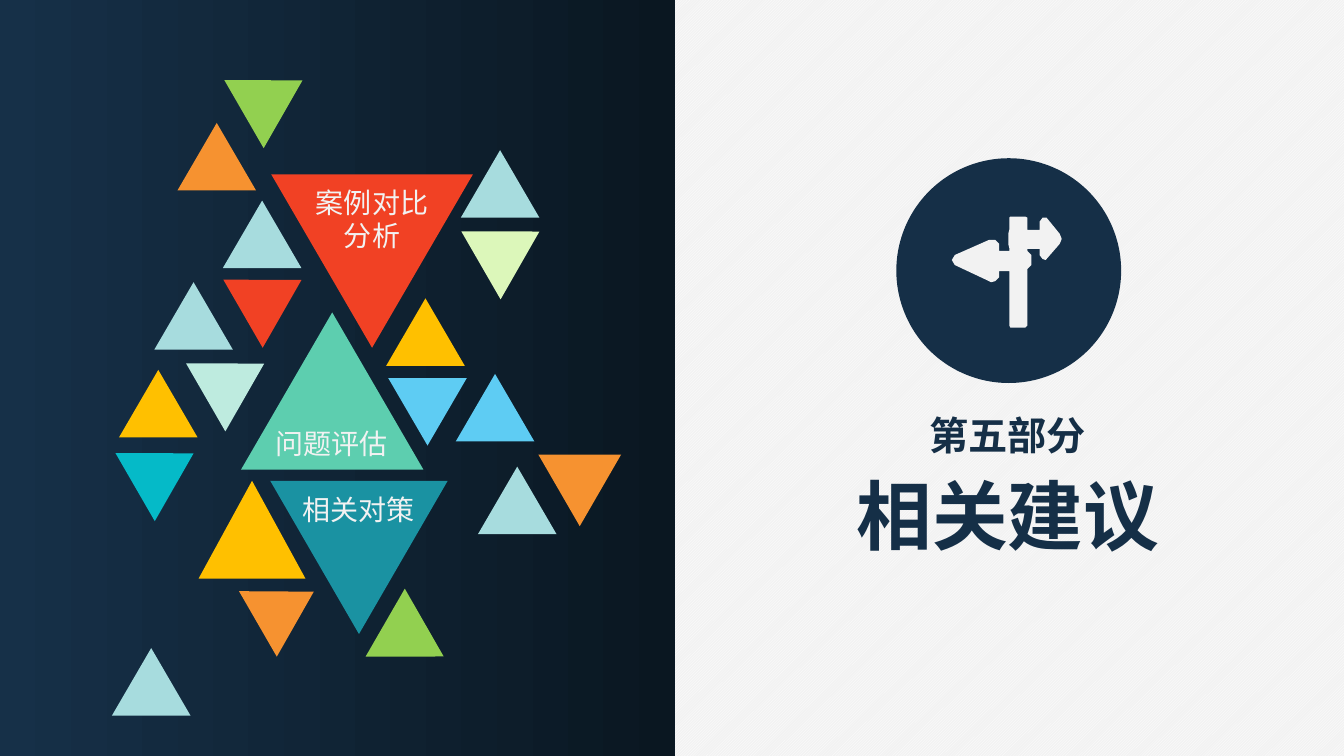
from lxml.etree import SubElement
from pptx import Presentation
from pptx.dml.color import RGBColor
from pptx.enum.dml import MSO_PATTERN as Pattern
from pptx.enum.shapes import MSO_SHAPE as Kind
from pptx.enum.text import MSO_AUTO_SIZE as Fit, PP_ALIGN as Align
from pptx.oxml.ns import qn
from pptx.util import Pt

PX = 9144  # EMU per px, 100 px to the inch
FONT = "Noto Sans CJK SC"
NAVY, PALE, WHITE = "152F47", "F2F2F2", "FFFFFF"
RED, AMBER, ORANGE, GREEN = "F14124", "FFC000", "F69230", "92D050"
MIST, SKY, MINT, JADE = "A7DCDE", "5ECCF3", "BEEBDF", "5DCEAF"
TEAL, CYAN, LIME = "1A92A2", "05BAC8", "DCF7BA"


def rgb(code):
    return RGBColor.from_string(code)


class Page:
    def __init__(self, deck):
        self.slide = deck.slides.add_slide(deck.slide_layouts[6])
        self.shapes = self.slide.shapes

    def ground(self, fore, back):
        fill = self.slide.background.fill
        fill.patterned()
        fill.pattern = Pattern.LIGHT_UPWARD_DIAGONAL
        fill.fore_color.rgb = rgb(fore)
        fill.back_color.rgb = rgb(back)

    def paint(self, shape, color):
        shape.shadow.inherit = False
        shape.line.fill.background()
        shape.fill.solid()
        shape.fill.fore_color.rgb = rgb(color)
        return shape

    def shape(self, kind, box, color, turn=0):
        item = self.shapes.add_shape(kind, *(n * PX for n in box))
        item.rotation = turn
        return self.paint(item, color)

    def fade(self, box, start, end):
        fill = self.shape(Kind.RECTANGLE, box, start).fill
        fill.gradient()
        fill.gradient_angle = 0
        for stop, color in zip(fill.gradient_stops, (start, end)):
            stop.color.rgb = rgb(color)

    def outline(self, points, color):
        pen = self.shapes.build_freeform(*points[0], scale=PX)
        pen.add_line_segments(points[1:], close=True)
        return self.paint(pen.convert_to_shape(), color)

    def text(self, box, lines, size, color, bold=False, align=Align.CENTER):
        frame = self.shapes.add_textbox(*(n * PX for n in box)).text_frame
        frame.word_wrap = False
        frame.auto_size = Fit.SHAPE_TO_FIT_TEXT
        frame.text = lines
        for para in frame.paragraphs:
            para.alignment = align
            font = para.font
            font.name, font.size, font.bold = FONT, Pt(size), bold
            font.color.rgb = rgb(color)
            style = para._p.pPr.find(qn("a:defRPr"))
            SubElement(style, qn("a:ea"), typeface=FONT)


# Small triangles, all of one size: left, top, colour, turn
SMALL = [
    (153, 280, MIST, 0), (457, 149, MIST, 0), (194, 344, MINT, 60),
    (111, 643, MIST, 0), (452, 371, SKY, 0), (176, 122, ORANGE, 0),
    (221, 199, MIST, 0), (232, 63, GREEN, 60), (467, 213, LIME, 60),
    (124, 433, CYAN, 60), (383, 296, AMBER, 0), (385, 375, SKY, 180),
    (231, 261, RED, 60), (474, 463, MIST, 0), (372, 601, GREEN, 120),
    (118, 367, AMBER, 0),
]
# Triangles of other sizes: box, colour, turn
LARGE = [
    ((239, 310, 181, 156), JADE, 0), ((268, 477, 176, 152), TEAL, 180),
    ((269, 173, 200, 172), RED, 180), ((534, 451, 82, 71), ORANGE, 180),
    ((246, 571, 75, 64), ORANGE, 60), ((197, 477, 106, 97), AMBER, 0),
]
# Signpost, clockwise from the right-hand arrow
SIGN = [
    (1051, 232), (1038, 216), (1034, 216), (1031, 220), (1031, 228),
    (1019, 228), (1019, 216), (1017, 215), (1002, 215), (1001, 216),
    (1001, 228), (1000, 232), (1000, 242), (1001, 246), (1001, 249),
    (991, 249), (991, 242), (987, 238), (981, 238), (947, 253),
    (944, 258), (947, 263), (981, 279), (983, 280), (987, 279),
    (991, 275), (991, 269), (1001, 269), (1001, 323), (1002, 325),
    (1017, 325), (1019, 323), (1019, 267), (1023, 263), (1023, 253),
    (1019, 249), (1019, 247), (1031, 247), (1031, 253), (1034, 257),
    (1037, 258), (1038, 257), (1051, 242), (1053, 237),
]


def main():
    deck = Presentation()
    deck.slide_width, deck.slide_height = 1333 * PX, 750 * PX
    page = Page(deck)

    # Background and dark left half
    page.ground(WHITE, PALE)
    page.fade((0, 0, 669, 750), "163048", "0A1721")

    # Section title and badge
    page.text((838, 460, 323, 101), "相关建议", 54, NAVY, bold=True)
    page.text((911, 403, 177, 57), "第五部分", 28, NAVY, bold=True)
    disc = page.shape(Kind.OVAL, (889, 157, 223, 223), NAVY)
    page.shapes.add_group_shape([disc, page.outline(SIGN, PALE)])

    # Triangles
    for left, top, color, turn in SMALL:
        page.shape(Kind.ISOSCELES_TRIANGLE, (left, top, 78, 67), color, turn)
    for box, color, turn in LARGE:
        page.shape(Kind.ISOSCELES_TRIANGLE, box, color, turn)

    # Topics
    page.text((303, 179, 132, 77), "案例对比\n分析", 20, PALE)
    page.text((263, 418, 132, 44), "问题评估", 20, PALE, align=Align.LEFT)
    page.text((290, 484, 132, 44), "相关对策", 20, PALE, align=Align.LEFT)

    deck.save("out.pptx")


if __name__ == "__main__":
    main()
